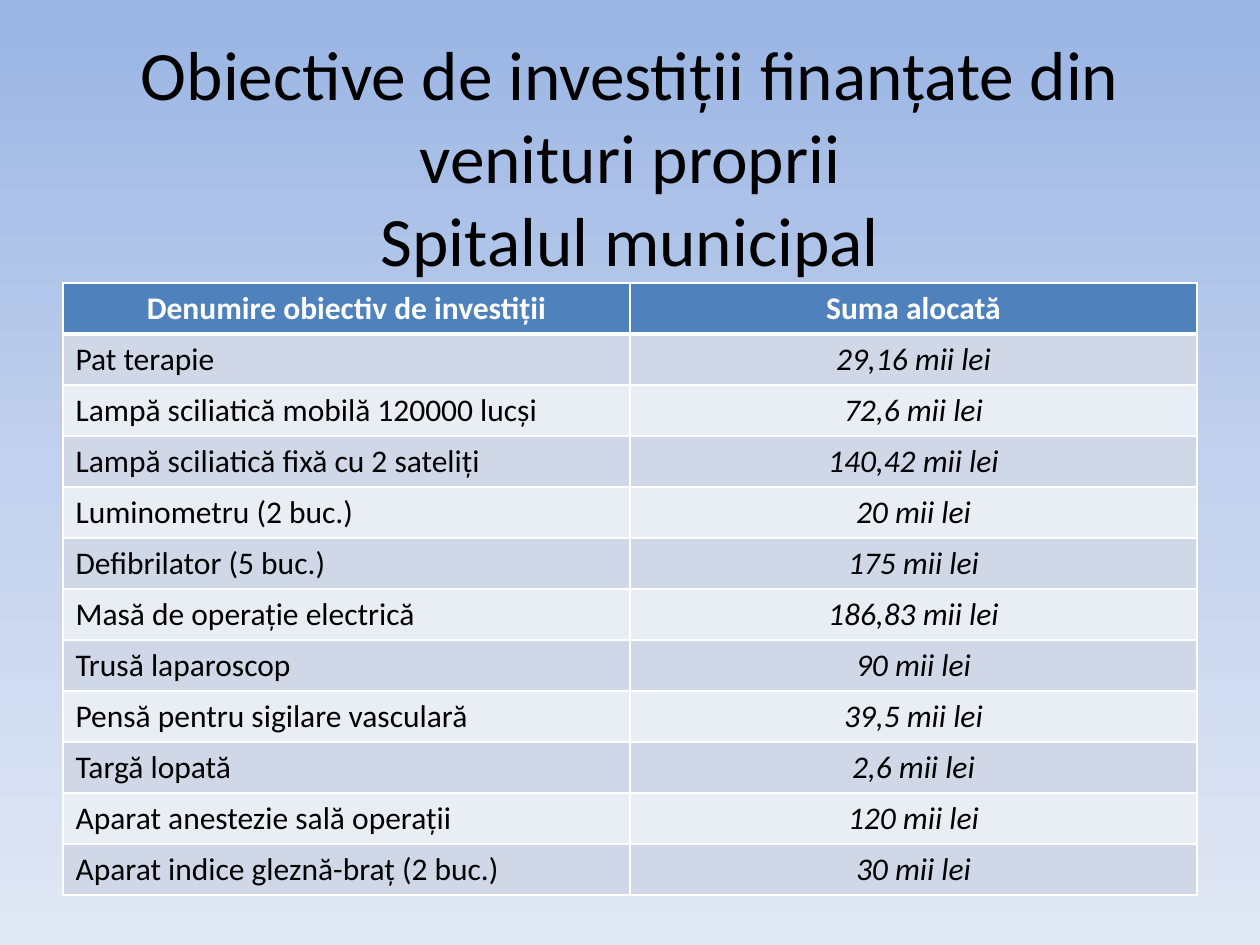
import copy
import pptx
import pptx.util
import pptx.dml.color
import pptx.enum.text
import pptx.oxml
import pptx.oxml.ns

TITLE = ["Obiective de investiții finanțate din venituri proprii", "Spitalul municipal"]
HEAD = ("Denumire obiectiv de investiții", "Suma alocată")
ITEMS = [
    ("Pat terapie", "29,16 mii lei"),
    ("Lampă sciliatică mobilă 120000 lucși", "72,6 mii lei"),
    ("Lampă sciliatică fixă cu 2 sateliți", "140,42 mii lei"),
    ("Luminometru (2 buc.)", "20 mii lei"),
    ("Defibrilator (5 buc.)", "175 mii lei"),
    ("Masă de operație electrică", "186,83 mii lei"),
    ("Trusă laparoscop", "90 mii lei"),
    ("Pensă pentru sigilare vasculară", "39,5 mii lei"),
    ("Targă lopată", "2,6 mii lei"),
    ("Aparat anestezie sală operații", "120 mii lei"),
    ("Aparat indice gleznă-braț (2 buc.)", "30 mii lei"),
]
COLORS = {
    "top": "9AB5E4", "mid": "C2D1ED", "base": "E1E8F5",
    "head": "4F81BD", "odd": "D0D8E8", "even": "E9EDF4",
    "white": "FFFFFF", "black": "000000",
}
FONT = "Calibri"
LEFT, WIDTH, ROW = 63, 1134, 51
ALIGN = pptx.enum.text.PP_ALIGN
ANCHOR = pptx.enum.text.MSO_ANCHOR


def px(n):
    return round(n * 914400 / 126)


def color(name):
    return pptx.dml.color.RGBColor.from_string(COLORS[name])


def write(para, text, size, hue, bold=False, slant=False):
    run = para.add_run()
    run.text = text
    font = run.font
    font.name, font.size = FONT, pptx.util.Pt(size)
    font.bold, font.italic = bold, slant
    font.color.rgb = color(hue)


def border(cell, low):
    props = cell._tc.get_or_add_tcPr()
    for side, wide in (("L", 1), ("R", 1), ("T", 1), ("B", low)):
        props.append(pptx.oxml.parse_xml(
            f'<a:ln{side} {pptx.oxml.ns.nsdecls("a")} w="{pptx.util.Pt(wide)}">'
            f'<a:solidFill><a:srgbClr val="{COLORS["white"]}"/></a:solidFill></a:ln{side}>'))


def shade(slide):
    fill = slide.background.fill
    fill.gradient()
    fill.gradient_angle = 270
    first = fill.gradient_stops[0]._gs
    first.addnext(copy.deepcopy(first))
    for stop, name, place in zip(fill.gradient_stops, ("top", "mid", "base"), (0, 0.5, 1)):
        stop.color.rgb = color(name)
        stop.position = place


def title(slide):
    box = slide.shapes.add_textbox(px(LEFT), px(38), px(WIDTH), px(236))
    frame = box.text_frame
    frame.word_wrap = True
    frame.vertical_anchor = ANCHOR.MIDDLE
    para = frame.paragraphs[0]
    para.alignment = ALIGN.CENTER
    for i, line in enumerate(TITLE):
        if i:
            para.add_line_break()
        write(para, line, 39.6, "black")


def table(slide):
    rows = [HEAD] + ITEMS
    count = len(rows)
    grid = slide.shapes.add_table(
        count, 2, px(LEFT), px(283), px(WIDTH), px(ROW * count)).table
    for col in grid.columns:
        col.width = px(WIDTH // 2)
    for r, row in enumerate(rows):
        grid.rows[r].height = px(ROW)
        head = r == 0
        for c, text in enumerate(row):
            cell = grid.cell(r, c)
            border(cell, 3 if head else 1)
            cell.fill.solid()
            cell.fill.fore_color.rgb = color("head" if head else "odd" if r % 2 else "even")
            para = cell.text_frame.paragraphs[0]
            para.alignment = ALIGN.CENTER if head or c else ALIGN.LEFT
            write(para, text, 18, "white" if head else "black", head, c == 1 and not head)


def main():
    deck = pptx.Presentation()
    deck.slide_width, deck.slide_height = px(1260), px(945)
    slide = deck.slides.add_slide(deck.slide_layouts[6])
    shade(slide)
    title(slide)
    table(slide)
    deck.save("out.pptx")


if __name__ == "__main__":
    main()
